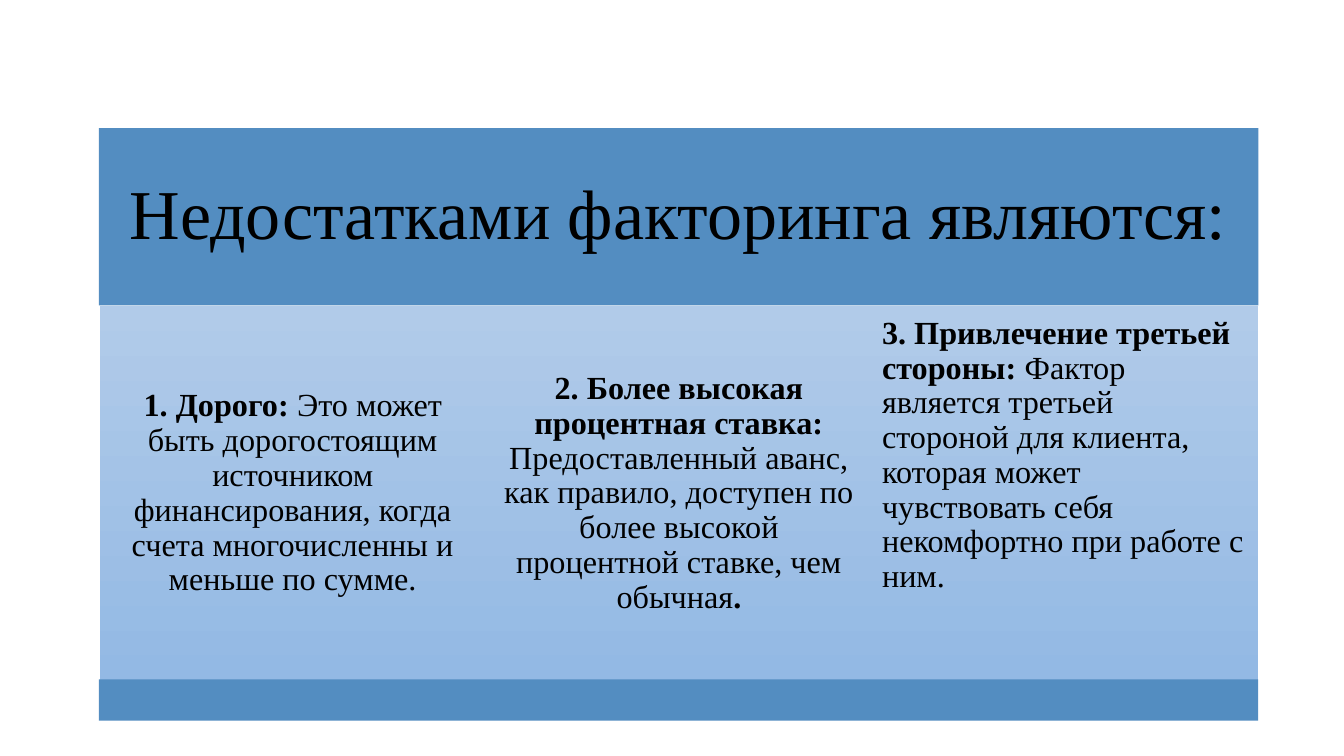
from pptx import Presentation
from pptx.dml.color import RGBColor
from pptx.enum.shapes import MSO_SHAPE
from pptx.enum.text import MSO_ANCHOR, MSO_AUTO_SIZE, PP_ALIGN
from pptx.util import Inches, Pt


def color(code):
    return RGBColor.from_string(code)


def write(frame, text, size=23, font="Times New Roman", ink="000000",
          align=PP_ALIGN.CENTER, anchor=MSO_ANCHOR.MIDDLE, inset=0.1):
    frame.word_wrap = True
    frame.auto_size = MSO_AUTO_SIZE.NONE
    frame.vertical_anchor = anchor
    frame.margin_left = frame.margin_right = Inches(inset)
    frame.margin_top = frame.margin_bottom = Inches(inset)
    para = frame.paragraphs[0]
    para.alignment = align
    para.line_spacing = 0.9
    para.space_before = Pt(0)
    for part, bold in text:
        run = para.add_run()
        run.text = part
        run.font.name = font
        run.font.size = Pt(size)
        run.font.bold = bold
        run.font.color.rgb = color(ink)


class Deck:
    band = "538DC1"
    light = "B1CBE9"
    deep = "93B9E4"

    def __init__(self):
        self.show = Presentation()
        self.show.slide_width = Inches(13.33)
        self.show.slide_height = Inches(7.5)
        self.slide = self.show.slides.add_slide(self.show.slide_layouts[5])

    def title(self, x, y, w, h, text):
        head = self.slide.shapes.title
        head.left, head.top = Inches(x), Inches(y)
        head.width, head.height = Inches(w), Inches(h)
        head.fill.solid()
        head.fill.fore_color.rgb = color(self.band)
        write(head.text_frame, [(text, False)], size=50, inset=0.21)

    def box(self, x, y, w, h):
        shape = self.slide.shapes.add_shape(
            MSO_SHAPE.RECTANGLE, Inches(x), Inches(y), Inches(w), Inches(h))
        shape.shadow.inherit = False
        shape.line.fill.background()
        return shape

    def bar(self, x, y, w, h):
        shape = self.box(x, y, w, h)
        shape.fill.solid()
        shape.fill.fore_color.rgb = color(self.band)

    def panel(self, x, y, w, h, text, **style):
        shape = self.box(x, y, w, h)
        shape.fill.gradient()
        shape.fill.gradient_angle = 270
        for stop, code in zip(shape.fill.gradient_stops, (self.light, self.deep)):
            stop.color.rgb = color(code)
        write(shape.text_frame, text, **style)


def main():
    deck = Deck()
    left, wide, col = 0.98, 11.5, 3.83
    deck.title(left, 1.27, wide, 1.76, "Недостатками факторинга являются:")
    center = {}
    corner = {"align": PP_ALIGN.LEFT, "anchor": MSO_ANCHOR.TOP}
    panels = [
        ([("1. Дорого: ", True),
          ("Это может быть дорогостоящим источником финансирования, "
           "когда счета многочисленны и меньше по сумме.", False)], center),
        ([("2. Более высокая процентная ставка: ", True),
          ("Предоставленный аванс, как правило, доступен по более "
           "высокой процентной ставке, чем обычная", False),
          (".", True)], center),
        ([("3. Привлечение третьей стороны: ", True),
          ("Фактор является третьей стороной для клиента, которая может "
           "чувствовать себя некомфортно при работе с ним.", False)], corner),
    ]
    for i, (text, style) in enumerate(panels):
        deck.panel(0.99 + i * col, 3.04, col, 3.71, text, **style)
    deck.bar(left, 6.74, wide, 0.41)
    deck.show.save("out.pptx")


if __name__ == "__main__":
    main()
